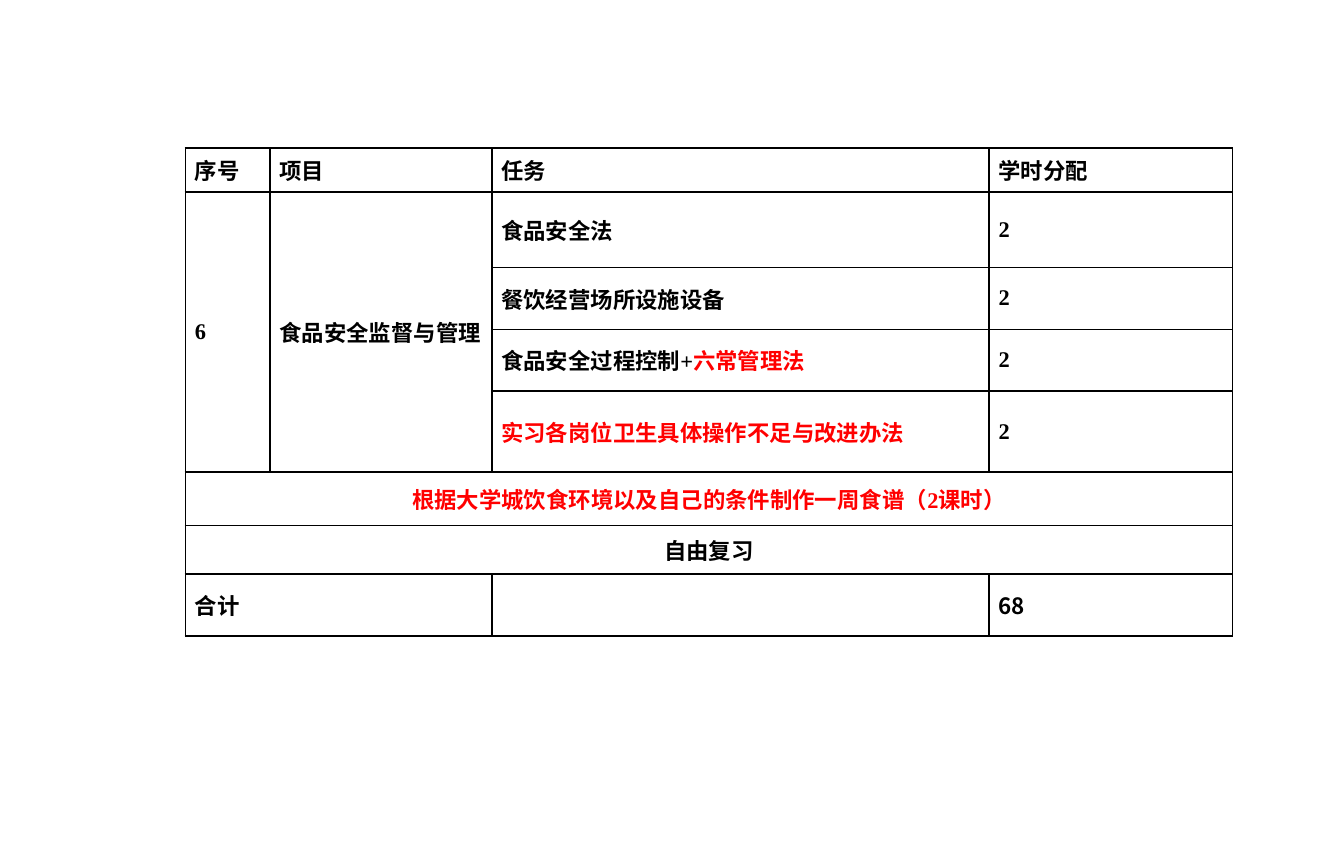
from lxml import etree
from pptx import Presentation
from pptx.dml.color import RGBColor
from pptx.enum.text import MSO_ANCHOR, PP_ALIGN
from pptx.oxml.ns import qn
from pptx.util import Inches, Pt

COLORS = {"black": "000000", "red": "FF0000"}
LATIN, CJK = "Times New Roman", "Noto Sans CJK SC"

# Content: each cell is a list of (text, colour) runs, placed by (row, column)
ROWS = [
    ["序号", "项目", "任务", "学时分配"],
    ["6", "食品安全监督与管理", "食品安全法", "2"],
    ["", "", "餐饮经营场所设施设备", "2"],
    ["", "", [("食品安全过程控制+", "black"), ("六常管理法", "red")], "2"],
    ["", "", [("实习各岗位卫生具体操作不足与改进办法", "red")], "2"],
    [[("根据大学城饮食环境以及自己的条件制作一周食谱（2课时）", "red")], "", "", ""],
    ["自由复习", "", "", ""],
    ["合计", "", "", "68"],
]
COL_WIDTHS = [0.63, 1.65, 3.7, 1.81]
ROW_HEIGHTS = [0.33, 0.56, 0.46, 0.46, 0.6, 0.4, 0.36, 0.46]
MERGES = [((1, 0), (4, 0)), ((1, 1), (4, 1)), ((5, 0), (5, 3)),
          ((6, 0), (6, 3)), ((7, 0), (7, 1))]
CENTERED_ROWS = (5, 6)


def add_borders(cell):
    tc_pr = cell._tc.get_or_add_tcPr()
    for i, side in enumerate(("lnL", "lnR", "lnT", "lnB")):
        ln = etree.Element(qn(f"a:{side}"), w=str(Pt(1)))
        fill = etree.SubElement(ln, qn("a:solidFill"))
        etree.SubElement(fill, qn("a:srgbClr"), val=COLORS["black"])
        tc_pr.insert(i, ln)


def add_run(p, text, color, latin):
    r = p.add_run()
    r.text = text
    r.font.size, r.font.bold, r.font.name = Pt(12), True, latin
    r.font.color.rgb = RGBColor.from_string(COLORS[color])
    etree.SubElement(r.font._element, qn("a:ea"), typeface=CJK)


def fill_cell(cell, content, align):
    cell.fill.background()
    add_borders(cell)
    cell.vertical_anchor = MSO_ANCHOR.MIDDLE
    cell.margin_left = cell.margin_right = Inches(0.07)
    cell.margin_top = cell.margin_bottom = 0
    p = cell.text_frame.paragraphs[0]
    p.alignment = align
    runs = [(content, "black")] if isinstance(content, str) else content
    for text, color in runs:
        if text:
            add_run(p, text, color, CJK if text == "68" else LATIN)


prs = Presentation()
prs.slide_width, prs.slide_height = Inches(10), Inches(6.3)
s = prs.slides.add_slide(prs.slide_layouts[6])

# Course hours table
frame = s.shapes.add_table(len(ROWS), len(COL_WIDTHS), Inches(1.38), Inches(1.1),
                           Inches(sum(COL_WIDTHS)), Inches(sum(ROW_HEIGHTS)))
table = frame.table
table.first_row = table.horz_banding = False
for column, width in zip(table.columns, COL_WIDTHS):
    column.width = Inches(width)
for row, height in zip(table.rows, ROW_HEIGHTS):
    row.height = Inches(height)

for i, row in enumerate(ROWS):
    align = PP_ALIGN.CENTER if i in CENTERED_ROWS else PP_ALIGN.JUSTIFY
    for j, content in enumerate(row):
        fill_cell(table.cell(i, j), content, align)

# Merged areas
for first, last in MERGES:
    table.cell(*first).merge(table.cell(*last))

prs.save("out.pptx")
